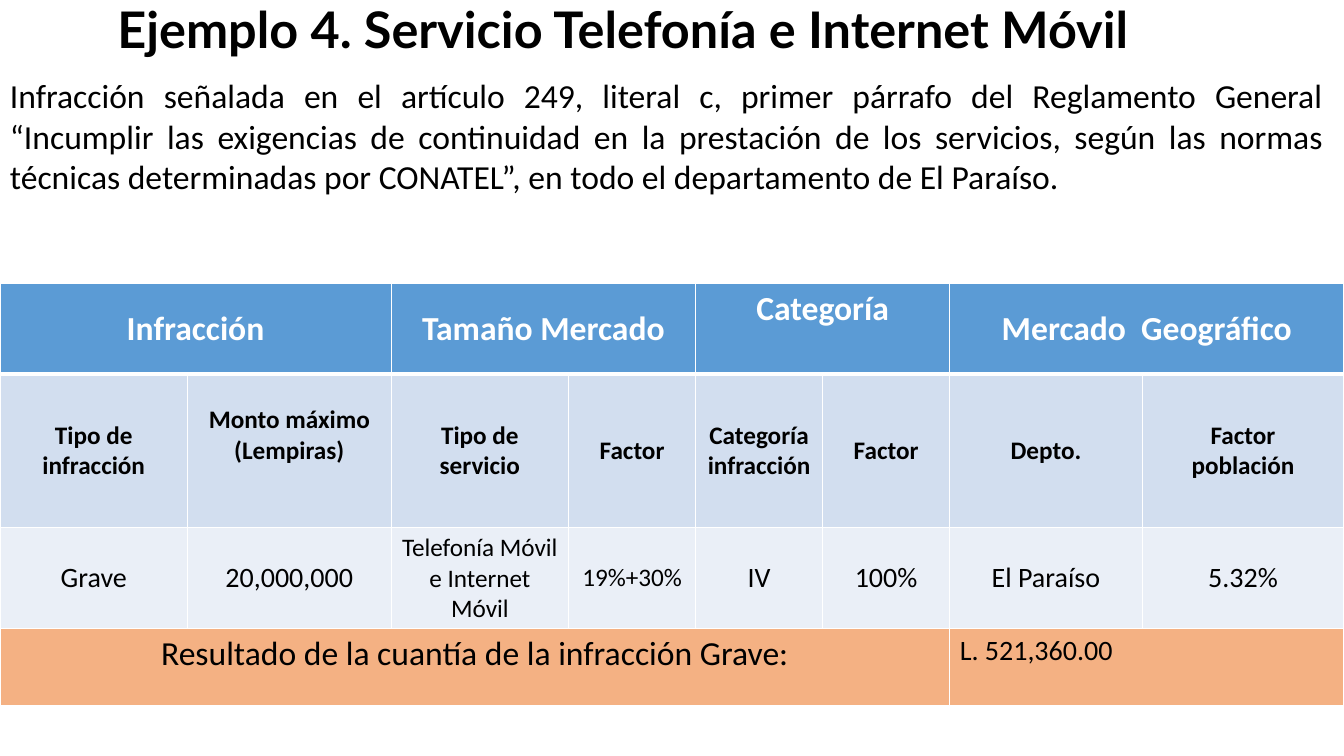
import pptx
import pptx.util
import pptx.dml.color
import pptx.enum.text
import pptx.oxml
import pptx.oxml.ns

RGBColor = pptx.dml.color.RGBColor
PP_ALIGN = pptx.enum.text.PP_ALIGN
ANCHOR = pptx.enum.text.MSO_ANCHOR

BLACK = RGBColor(0x00, 0x00, 0x00)
WHITE = RGBColor(0xFF, 0xFF, 0xFF)
HEADER_BLUE = RGBColor(0x5B, 0x9B, 0xD5)
LABEL_BLUE = RGBColor(0xD2, 0xDE, 0xEF)
VALUE_BLUE = RGBColor(0xEA, 0xEF, 0xF7)
RESULT_ORANGE = RGBColor(0xF4, 0xB1, 0x83)

W = pptx.util.Inches(13.33)
H = pptx.util.Inches(7.5)
COLUMNS = [1.86, 2.02, 1.76, 1.26, 1.26, 1.26, 1.91, 2]
ROWS = [0.9, 1.52, 1, 0.77]
THIN, THICK = 1, 3

TITLE = "Ejemplo 4. Servicio Telefonía e Internet Móvil"
INTRO = (
    "Infracción señalada en el artículo 249, literal c, primer párrafo del "
    "Reglamento General “Incumplir las exigencias de continuidad en la "
    "prestación de los servicios, según las normas técnicas determinadas por "
    "CONATEL”, en todo el departamento de El Paraíso."
)
GROUPS = ["Infracción", "Tamaño Mercado", "Categoría", "Mercado  Geográfico"]
LABELS = [
    "Tipo de infracción", "Monto máximo\n(Lempiras)", "Tipo de servicio",
    "Factor", "Categoría infracción", "Factor", "Depto.", "Factor\npoblación",
]
VALUES = [
    ("Grave", 20), ("20,000,000", 20),
    ("Telefonía Móvil e Internet Móvil", 18), ("19%+30%", 18),
    ("IV", 20), ("100%", 20), ("El Paraíso", 20), ("5.32%", 20),
]


def write(tf, text, size, font="Calibri", color=BLACK, bold=False,
          align=PP_ALIGN.CENTER, spacing=None):
    tf.word_wrap = True
    tf.text = text
    for p in tf.paragraphs:
        p.alignment = align
        p.line_spacing = spacing
        p.font.name = font
        p.font.size = pptx.util.Pt(size)
        p.font.bold = bold
        p.font.color.rgb = color


def add_text(s, x, y, w, h, text, size, **style):
    tb = s.shapes.add_textbox(int(W * x), int(H * y), int(W * w), int(H * h))
    write(tb.text_frame, text, size, **style)


def set_borders(cell, top=THIN, bottom=THIN):
    tcPr = cell._tc.get_or_add_tcPr()
    sides = {"L": THIN, "R": THIN, "T": top, "B": bottom}
    for i, (side, points) in enumerate(sides.items()):
        tcPr.insert(i, pptx.oxml.parse_xml(
            f'<a:ln{side} {pptx.oxml.ns.nsdecls("a")} '
            f'w="{pptx.util.Pt(points)}"><a:solidFill>'
            f'<a:srgbClr val="{WHITE}"/></a:solidFill></a:ln{side}>'))


def fill_cell(cell, text, size, fill, anchor=ANCHOR.MIDDLE, **style):
    write(cell.text_frame, text, size, **style)
    cell.vertical_anchor = anchor
    cell.fill.solid()
    cell.fill.fore_color.rgb = fill


def add_grid(s, y):
    unit = W / sum(COLUMNS)
    table = s.shapes.add_table(
        len(ROWS), len(COLUMNS), 0, int(H * y), W, int(unit * sum(ROWS))).table
    table.first_row = table.horz_banding = False
    for column, width in zip(table.columns, COLUMNS):
        column.width = int(unit * width)
    for row, height in zip(table.rows, ROWS):
        row.height = int(unit * height)
    for i in range(len(ROWS)):
        for j in range(len(COLUMNS)):
            set_borders(table.cell(i, j),
                        top=THICK if i == 1 else THIN,
                        bottom=THICK if i == 0 else THIN)
    return table


def merge(table, row, first, last):
    cell = table.cell(row, first)
    cell.merge(table.cell(row, last))
    return cell


def add_fine_table(s):
    table = add_grid(s, 0.375)
    for i, group in enumerate(GROUPS):
        anchor = ANCHOR.TOP if group == "Categoría" else ANCHOR.MIDDLE
        fill_cell(merge(table, 0, 2 * i, 2 * i + 1), group, 24, HEADER_BLUE,
                  anchor, color=WHITE, bold=True)
    for j, label in enumerate(LABELS):
        fill_cell(table.cell(1, j), label, 18, LABEL_BLUE, bold=True)
    table.cell(1, 1).margin_bottom = int(H * 0.047)
    for j, (value, size) in enumerate(VALUES):
        fill_cell(table.cell(2, j), value, size, VALUE_BLUE)
    fill_cell(merge(table, 3, 0, 5),
              "Resultado de la cuantía de la infracción Grave:", 24,
              RESULT_ORANGE, ANCHOR.TOP)
    fill_cell(merge(table, 3, 6, 7), "L. 521,360.00", 20, RESULT_ORANGE,
              ANCHOR.TOP, align=PP_ALIGN.LEFT)


def main():
    prs = pptx.Presentation()
    prs.slide_width, prs.slide_height = W, H
    s = prs.slides.add_slide(prs.slide_layouts[6])
    add_text(s, 0.08, 0, 0.86, 0.12, TITLE, 36, font="Lato", bold=True,
             align=PP_ALIGN.LEFT, spacing=0.9)
    add_text(s, 0, 0.093, 0.992, 0.175, INTRO, 24, align=PP_ALIGN.JUSTIFY)
    add_fine_table(s)
    prs.save("out.pptx")


if __name__ == "__main__":
    main()
